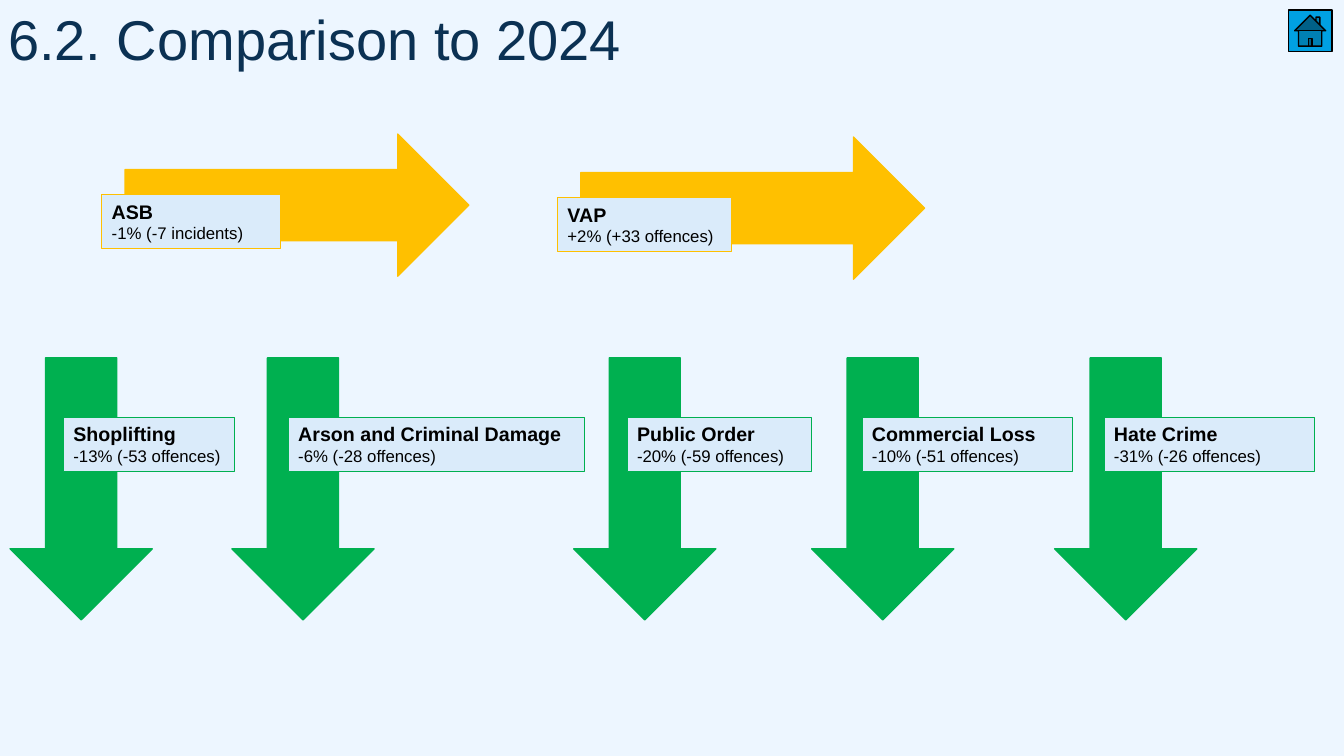
from dataclasses import dataclass

from pptx import Presentation
from pptx.dml.color import RGBColor
from pptx.enum.shapes import MSO_SHAPE
from pptx.enum.text import MSO_ANCHOR, MSO_AUTO_SIZE, PP_ALIGN
from pptx.util import Inches, Pt


@dataclass(frozen=True)
class Theme:
    font: str = "Arial"
    back: str = "EDF6FF"
    title: str = "0B3153"
    text: str = "000000"
    label: str = "DAEBFA"
    steady: str = "FFC000"
    down: str = "00B050"
    home: str = "00A0E2"
    big: int = 40
    head: int = 14
    body: int = 12


def write(para, text, size, color, font, bold=False, space=None):
    """Add one formatted run to a paragraph."""
    run = para.add_run()
    run.text = text
    run.font.name = font
    run.font.size = Pt(size)
    run.font.bold = bold
    run.font.color.rgb = RGBColor.from_string(color)
    para.alignment = PP_ALIGN.LEFT
    if space:
        para.line_spacing = space


class Board:
    """Draws on one slide; lengths are cells of a grid, ten to the inch."""

    def __init__(self, deck, theme):
        self.theme = theme
        self.slide = deck.slides.add_slide(deck.slide_layouts[6])
        fill = self.slide.background.fill
        fill.solid()
        fill.fore_color.rgb = RGBColor.from_string(theme.back)

    def place(self, *cells):
        return [Inches(cell / 10) for cell in cells]

    def shape(self, kind, box, fill, line, width=1):
        item = self.slide.shapes.add_shape(kind, *self.place(*box))
        item.shadow.inherit = False
        item.fill.solid()
        item.fill.fore_color.rgb = RGBColor.from_string(fill)
        item.line.color.rgb = RGBColor.from_string(line)
        item.line.width = Pt(width)
        return item

    def title(self, text, box):
        look = self.theme
        frame = self.slide.shapes.add_textbox(*self.place(*box)).text_frame
        frame.word_wrap = True
        frame.margin_left = frame.margin_right = 0
        frame.margin_top = frame.margin_bottom = 0
        write(frame.paragraphs[0], text, look.big, look.title, look.font,
              space=0.9)

    def label(self, head, body, box, line):
        look = self.theme
        item = self.shape(MSO_SHAPE.RECTANGLE, box, look.label, line, 0.75)
        frame = item.text_frame
        frame.word_wrap = True
        frame.auto_size = MSO_AUTO_SIZE.SHAPE_TO_FIT_TEXT
        frame.vertical_anchor = MSO_ANCHOR.TOP
        write(frame.paragraphs[0], head, look.head, look.text, look.font,
              bold=True)
        write(frame.add_paragraph(), body, look.body, look.text, look.font)

    def trend(self, kind, color, arrow, tag, head, body):
        """Draw an arrow with its label on top."""
        self.shape(kind, arrow, color, color)
        self.label(head, body, tag, color)


LABEL_H = 5.4

# arrow left, arrow top, label width, heading, change
STEADY = [
    (12.4, 13.3, 17.7, "ASB", "-1% (-7 incidents)"),
    (57.6, 13.6, 17.3, "VAP", "+2% (+33 offences)"),
]

# arrow left, label left, label width, heading, change
FALLS = [
    (1, 6.3, 17, "Shoplifting", "-13% (-53 offences)"),
    (23, 28.6, 29.4, "Arson and Criminal Damage", "-6% (-28 offences)"),
    (56.9, 62.2, 18.3, "Public Order", "-20% (-59 offences)"),
    (80.5, 85.5, 20.9, "Commercial Loss", "-10% (-51 offences)"),
    (104.6, 109.5, 20.9, "Hate Crime", "-31% (-26 offences)"),
]


def main():
    deck = Presentation()
    deck.slide_width, deck.slide_height = Inches(13.33), Inches(7.5)
    theme = Theme()
    board = Board(deck, theme)
    board.title("6.2. Comparison to 2024", (0.8, 1.2, 110.8, 12.1))
    board.shape(MSO_SHAPE.ACTION_BUTTON_HOME, (127.8, 1, 4.3, 4.1),
                theme.home, theme.text)
    for left, top, wide, head, body in STEADY:
        board.trend(MSO_SHAPE.RIGHT_ARROW, theme.steady,
                    (left, top, 34.1, 14.1),
                    (left - 2.3, top + 6, wide, LABEL_H), head, body)
    for left, tag, wide, head, body in FALLS:
        board.trend(MSO_SHAPE.DOWN_ARROW, theme.down,
                    (left, 35.5, 14.1, 26),
                    (tag, 41.4, wide, LABEL_H), head, body)
    deck.save("out.pptx")


if __name__ == "__main__":
    main()
